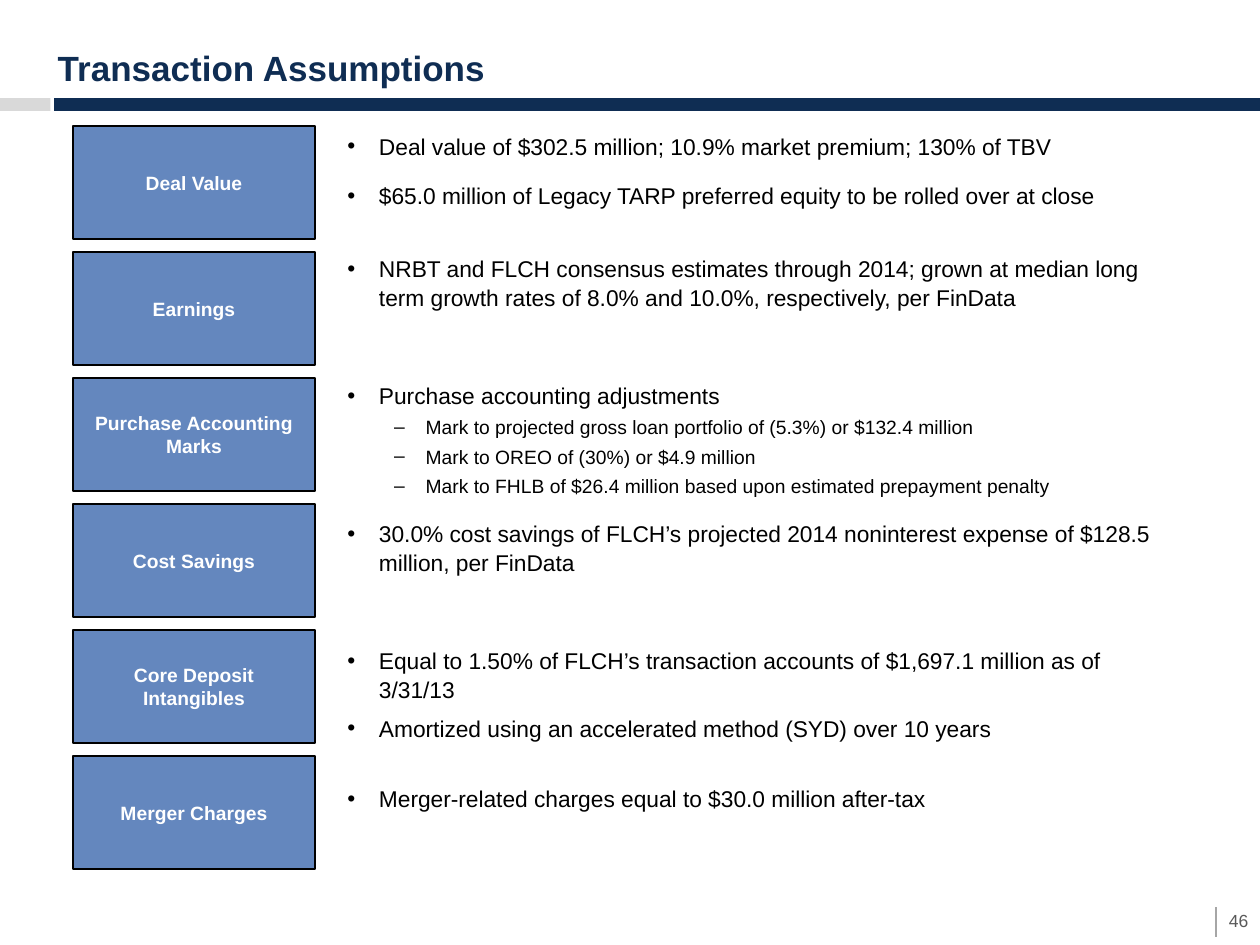
from lxml.etree import SubElement
from pptx import Presentation
from pptx.dml.color import RGBColor
from pptx.enum.shapes import MSO_CONNECTOR, MSO_SHAPE
from pptx.enum.text import MSO_ANCHOR, PP_ALIGN
from pptx.oxml.ns import qn
from pptx.util import Inches, Pt

NAVY = RGBColor(0x0F, 0x2D, 0x53)
BLUE = RGBColor(0x64, 0x87, 0xBE)
LIGHT_GRAY = RGBColor(0xD9, 0xD9, 0xD9)
MID_GRAY = RGBColor(0xA6, 0xA6, 0xA6)
DARK_GRAY = RGBColor(0x59, 0x59, 0x59)
BLACK = RGBColor(0, 0, 0)
WHITE = RGBColor(0xFF, 0xFF, 0xFF)

TOPICS = [
    "Deal Value", "Earnings", "Purchase Accounting Marks",
    "Cost Savings", "Core Deposit Intangibles", "Merger Charges",
]

# Level, space before in points, wording
ASSUMPTIONS = [
    (0, 0, "Deal value of $302.5 million; 10.9% market premium; 130% of TBV"),
    (0, 12, "$65.0 million of Legacy TARP preferred equity to be rolled over at close"),
    (0, 25.2, "NRBT and FLCH consensus estimates through 2014; grown at median long "
              "term growth rates of 8.0% and 10.0%, respectively, per FinData"),
    (0, 39.7, "Purchase accounting adjustments"),
    (1, 3, "Mark to projected gross loan portfolio of (5.3%) or $132.4 million"),
    (1, 3, "Mark to OREO of (30%) or $4.9 million"),
    (1, 3, "Mark to FHLB of $26.4 million based upon estimated prepayment penalty"),
    (0, 12, "30.0% cost savings of FLCH’s projected 2014 noninterest expense of "
            "$128.5 million, per FinData"),
    (0, 39.7, "Equal to 1.50% of FLCH’s transaction accounts of $1,697.1 million "
              "as of 3/31/13"),
    (0, 6, "Amortized using an accelerated method (SYD) over 10 years"),
    (0, 24, "Merger-related charges equal to $30.0 million after-tax"),
]

# Bullet sign, text indent in inches and text size for each level
LEVELS = [("•", 0.25, 13), ("–", 0.62, 11)]
HANGING = 0.25


class SlideBuilder:
    font_name = "Arial"
    line_spacing = 1.05

    def __init__(self, page):
        self.page = page

    def add_span(self, para, text, color, **formats):
        span = para.add_run()
        span.text = text
        span.font.color.rgb = color
        for name, value in {"name": self.font_name, **formats}.items():
            setattr(span.font, name, value)

    def text_box(self, place, anchor=MSO_ANCHOR.TOP):
        box = self.page.shapes.add_textbox(*map(Inches, place))
        box.text_frame.word_wrap = True
        box.text_frame.vertical_anchor = anchor
        return box.text_frame

    def label(self, place, text, color, align, anchor, **formats):
        para = self.text_box(place, anchor).paragraphs[0]
        para.alignment = align
        self.add_span(para, text, color, **formats)

    def rectangle(self, place, fill, outline=None):
        box = self.page.shapes.add_shape(MSO_SHAPE.RECTANGLE, *map(Inches, place))
        box.shadow.inherit = False
        box.fill.solid()
        box.fill.fore_color.rgb = fill
        if outline is None:
            box.line.fill.background()
        else:
            box.line.color.rgb = outline
            box.line.width = Pt(1)
        return box

    def topic(self, place, text):
        frame = self.rectangle(place, BLUE, BLACK).text_frame
        frame.word_wrap = True
        frame.vertical_anchor = MSO_ANCHOR.MIDDLE
        para = frame.paragraphs[0]
        para.alignment = PP_ALIGN.CENTER
        self.add_span(para, text, WHITE, size=Pt(11), bold=True)

    def line(self, ends, color, width):
        rule = self.page.shapes.add_connector(MSO_CONNECTOR.STRAIGHT, *map(Inches, ends))
        rule.line.color.rgb = color
        rule.line.width = Pt(width)
        SubElement(rule._element.spPr, qn("a:effectLst"))

    def bullets(self, place, items):
        frame = self.text_box(place)
        for index, (level, space, text) in enumerate(items):
            sign, indent, size = LEVELS[level]
            para = frame.add_paragraph() if index else frame.paragraphs[0]
            properties = para._p.get_or_add_pPr()
            properties.set("marL", str(Inches(indent)))
            properties.set("indent", str(-Inches(HANGING)))
            SubElement(properties, qn("a:buFont")).set("typeface", self.font_name)
            SubElement(properties, qn("a:buChar")).set("char", sign)
            para.level = level
            para.line_spacing = self.line_spacing
            para.space_before = Pt(space)
            self.add_span(para, text, BLACK, size=Pt(size))


def main():
    deck = Presentation()
    deck.slide_width, deck.slide_height = Inches(10), Inches(7.5)
    builder = SlideBuilder(deck.slides.add_slide(deck.slide_layouts[6]))

    # Title and header band
    builder.rectangle((0, 0.78, 0.4, 0.1), LIGHT_GRAY)
    builder.rectangle((0.43, 0.78, 9.57, 0.1), NAVY)
    builder.label((0.36, 0.25, 9, 0.5), "Transaction Assumptions", NAVY,
                  PP_ALIGN.LEFT, MSO_ANCHOR.BOTTOM, size=Pt(20), bold=True)

    # Assumptions beside their topics
    builder.bullets((2.66, 0.99, 6.6, 6.01), ASSUMPTIONS)
    for row, text in enumerate(TOPICS, start=1):
        builder.topic((0.58, row, 1.92, 0.9), text)

    # Page number
    builder.line((9.65, 7.2, 9.65, 7.44), MID_GRAY, 1.25)
    builder.label((9.6, 7.11, 0.46, 0.4), "46", DARK_GRAY,
                  PP_ALIGN.CENTER, MSO_ANCHOR.MIDDLE, size=Pt(10))

    deck.save("out.pptx")


if __name__ == "__main__":
    main()
